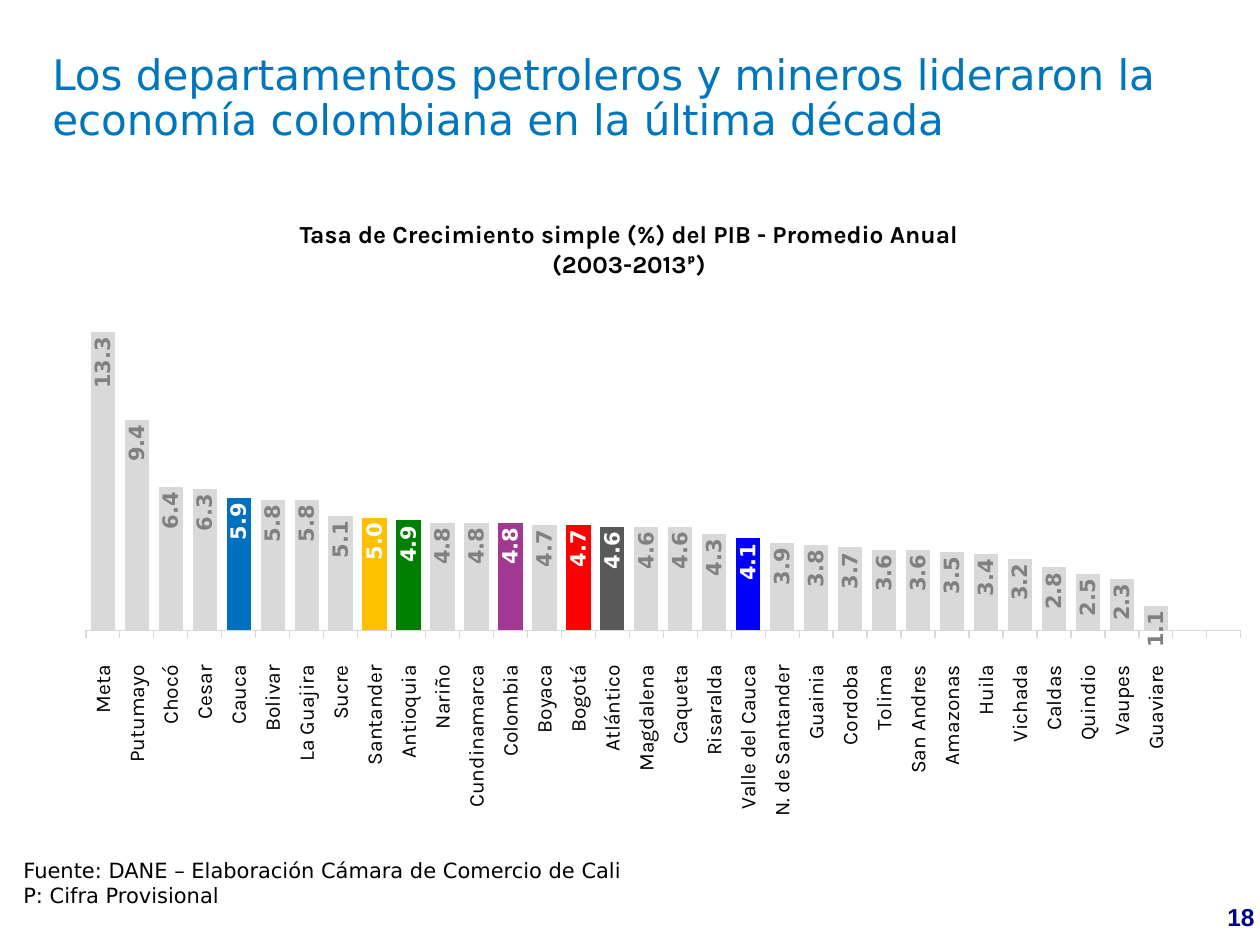
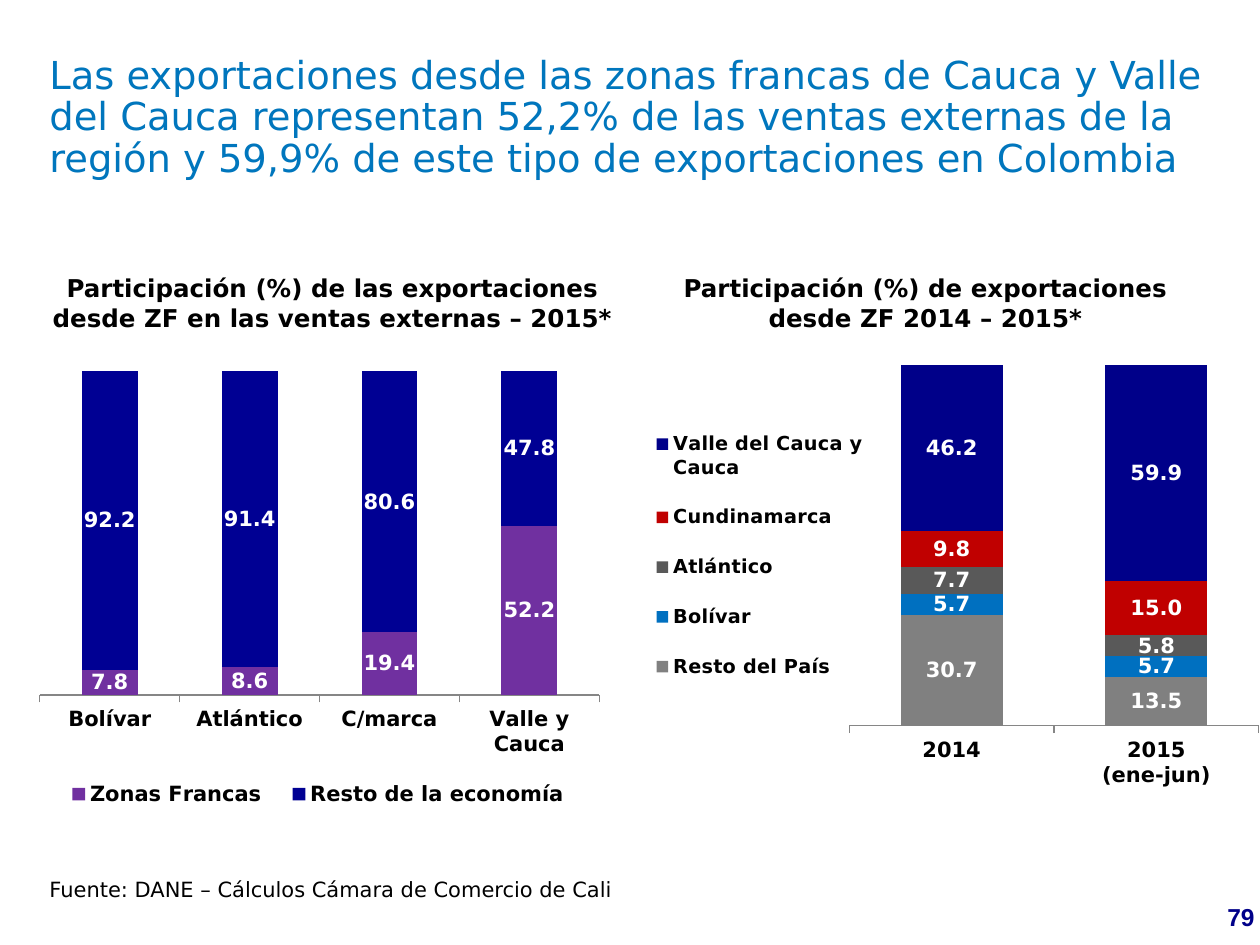
from copy import deepcopy
from dataclasses import dataclass

from lxml.etree import SubElement
from pptx import Presentation
from pptx.chart.data import CategoryChartData
from pptx.dml.color import RGBColor
from pptx.enum.chart import (XL_CHART_TYPE, XL_LABEL_POSITION, XL_LEGEND_POSITION,
                             XL_TICK_LABEL_POSITION, XL_TICK_MARK)
from pptx.enum.text import MSO_ANCHOR, PP_ALIGN
from pptx.oxml.ns import qn
from pptx.util import Emu, Pt

PX = 914400 / 126


@dataclass(frozen=True)
class Theme:
    body: str = "DejaVu Sans"
    heading: str = "Karla"
    symbol: str = "Calibri"
    number: str = "Arial"
    black: str = "000000"
    white: str = "FFFFFF"
    title: str = "0076BD"
    navy: str = "000089"
    deep_navy: str = "000093"
    bar: str = "D9D9D9"
    gray: str = "808080"
    dark_gray: str = "595959"
    axis: str = "868686"
    blue: str = "0070C0"
    pure_blue: str = "0000FF"
    gold: str = "FFC000"
    green: str = "008000"
    magenta: str = "A13992"
    red: str = "FF0000"
    dark_red: str = "C00000"
    purple: str = "7030A0"
    title_size: int = 24
    long_title_size: int = 22
    heading_size: int = 14
    text_size: int = 12
    small_size: int = 11


def px(n):
    return Emu(round(n * PX))


class Deck:
    def __init__(self, theme):
        self.theme = theme
        self.prs = Presentation()
        self.prs.slide_width, self.prs.slide_height = px(1260), px(945)
        self.slide = None

    def new_slide(self, number):
        self.slide = self.prs.slides.add_slide(self.prs.slide_layouts[6])
        t = self.theme
        self.text((1202, 896, 78, 43), [str(number)], t.heading_size, t.navy,
                  bold=True, name=t.number, align=PP_ALIGN.CENTER)

    def style(self, font, size, color, bold=False, name=None):
        font.size, font.bold, font.name = Pt(size), bold, name or self.theme.body
        font.color.rgb = RGBColor.from_string(color)

    def text(self, box, lines, size, color, bold=False, name=None,
             align=PP_ALIGN.LEFT, anchor=MSO_ANCHOR.TOP, spacing=None):
        tf = self.slide.shapes.add_textbox(*map(px, box)).text_frame
        tf.word_wrap, tf.vertical_anchor = True, anchor
        for i, line in enumerate(lines):
            p = tf.paragraphs[0] if i == 0 else tf.add_paragraph()
            p.alignment = align
            if spacing:
                p.line_spacing = spacing
            for part in [line] if isinstance(line, str) else line:
                r = p.add_run()
                if isinstance(part, tuple):
                    r.text, r.font.name = part
                else:
                    r.text = part
            self.style(p.font, size, color, bold, name)

    def title(self, box, words, size, anchor=MSO_ANCHOR.TOP):
        self.text(box, [words], size, self.theme.title, anchor=anchor, spacing=0.9)

    def heading(self, box, lines, name=None):
        self.text(box, lines, self.theme.heading_size, self.theme.black,
                  bold=True, name=name, align=PP_ALIGN.CENTER)

    def source(self, box, lines):
        self.text(box, lines, self.theme.text_size, self.theme.black)

    def layout(self, parent, box, inner=False):
        old = parent.find(qn("c:layout"))
        if old is not None:
            parent.remove(old)
        layout = SubElement(parent, qn("c:layout"))
        manual = SubElement(layout, qn("c:manualLayout"))
        if inner:
            SubElement(manual, qn("c:layoutTarget")).set("val", "inner")
        for key in ("xMode", "yMode"):
            SubElement(manual, qn(f"c:{key}")).set("val", "edge")
        for key, value in zip("xywh", box):
            SubElement(manual, qn(f"c:{key}")).set("val", str(value))
        if inner:
            parent.insert(0, layout)
        else:
            parent.find(qn("c:legendPos")).addnext(layout)

    def chart(self, kind, box, cats, series, plot_box, gap, line, label_color,
              limits=(None, None), axis_font=None, axis_bold=True):
        t = self.theme
        data = CategoryChartData(number_format="0.0")
        data.categories = cats
        for name, values, _ in series:
            data.add_series(name, values)
        chart = self.slide.shapes.add_chart(kind, *map(px, box), data).chart
        chart.has_title = chart.has_legend = False
        self.style(chart.font, t.text_size, t.black)
        self.layout(chart.plots[0]._element.getparent(), plot_box, inner=True)
        plot = chart.plots[0]
        plot.gap_width, plot.vary_by_categories = gap, False
        if kind != XL_CHART_TYPE.COLUMN_CLUSTERED:
            plot.overlap = 100
        value_axis = chart.value_axis
        value_axis.visible = value_axis.has_major_gridlines = False
        low, high = limits
        if high is not None:
            value_axis.minimum_scale, value_axis.maximum_scale = low, high
        axis = chart.category_axis
        axis.major_tick_mark = XL_TICK_MARK.OUTSIDE
        axis.format.line.color.rgb = RGBColor.from_string(line)
        axis.format.line.width = Pt(0.75)
        self.style(axis.tick_labels.font, t.text_size, t.black, axis_bold, axis_font)
        for s, (_, _, color) in zip(plot.series, series):
            s.format.fill.solid()
            s.format.fill.fore_color.rgb = RGBColor.from_string(color)
            labels = s.data_labels
            labels.show_value = True
            labels.number_format, labels.number_format_is_linked = "0.0", False
            self.style(labels.font, t.text_size, label_color, bold=True)
        return chart

    def legend(self, chart, position, size, box):
        chart.has_legend = True
        legend = chart.legend
        legend.position, legend.include_in_layout = position, False
        self.style(legend.font, size, self.theme.black, bold=True)
        self.layout(legend._element, box)

    def turn(self, element):
        body = element.find(qn("c:txPr")).find(qn("a:bodyPr"))
        body.set("rot", "-5400000")
        body.set("vert", "horz")

    def highlight(self, series, colors):
        labels = series.data_labels._element
        for i, color in colors.items():
            point = series.points[i]
            point.format.fill.solid()
            point.format.fill.fore_color.rgb = RGBColor.from_string(color)
            label = point.data_label
            self.style(label.font, self.theme.text_size, self.theme.white, bold=True)
            label.position = XL_LABEL_POSITION.INSIDE_END
        for item in labels.findall(qn("c:dLbl")):
            item.find(qn("c:idx")).addnext(deepcopy(labels.find(qn("c:numFmt"))))
            self.turn(item)


def growth_slide(deck):
    t = deck.theme
    deck.new_slide(18)
    deck.heading((226, 213, 806, 72), [
        "Tasa de Crecimiento simple (%) del PIB - Promedio Anual",
        ["(2003-2013", ("ᵖ", t.symbol), ")"]], t.heading)
    growth = {
        "Meta": 13.3, "Putumayo": 9.4, "Chocó": 6.4, "Cesar": 6.3, "Cauca": 5.9,
        "Bolivar": 5.8, "La Guajira": 5.8, "Sucre": 5.1, "Santander": 5.0,
        "Antioquia": 4.9, "Nariño": 4.8, "Cundinamarca": 4.8, "Colombia": 4.8,
        "Boyaca": 4.7, "Bogotá": 4.7, "Atlántico": 4.6, "Magdalena": 4.6,
        "Caqueta": 4.6, "Risaralda": 4.3, "Valle del Cauca": 4.1,
        "N. de Santander": 3.9, "Guainia": 3.8, "Cordoba": 3.7, "Tolima": 3.6,
        "San Andres": 3.6, "Amazonas": 3.5, "Huila": 3.4, "Vichada": 3.2,
        "Caldas": 2.8, "Quindio": 2.5, "Vaupes": 2.3, "Guaviare": 1.1}
    accents = {"Cauca": t.blue, "Santander": t.gold, "Antioquia": t.green,
               "Colombia": t.magenta, "Bogotá": t.red, "Atlántico": t.dark_gray,
               "Valle del Cauca": t.pure_blue}
    names = list(growth)
    chart = deck.chart(
        XL_CHART_TYPE.COLUMN_CLUSTERED, (68, 275, 1192, 577), names + ["", ""],
        [("Series 1", list(growth.values()) + [None, None], t.bar)],
        (0.015, 0.033, 0.969, 0.622), 40, t.bar, t.gray, (-1, 15), t.heading, False)
    chart.category_axis.tick_label_position = XL_TICK_LABEL_POSITION.LOW
    deck.turn(chart.category_axis._element)
    series = chart.plots[0].series[0]
    series.data_labels.position = XL_LABEL_POSITION.INSIDE_END
    deck.turn(series.data_labels._element)
    deck.highlight(series, {names.index(n): c for n, c in accents.items()})
    deck.title((40, 48, 1133, 100),
               "Los departamentos petroleros y mineros lideraron la "
               "economía colombiana en la última década", t.title_size)
    deck.source((11, 851, 1211, 63), [
        "Fuente: DANE – Elaboración Cámara de Comercio de Cali",
        "P: Cifra Provisional"])


def free_zone_slide(deck):
    t = deck.theme
    deck.new_slide(79)
    shares = deck.chart(
        XL_CHART_TYPE.COLUMN_STACKED_100, (650, 365, 610, 459),
        ["2014", "2015\n(ene-jun)"],
        [("Resto del País", (30.7, 13.5), t.gray),
         ("Bolívar", (5.7, 5.7), t.blue),
         ("Atlántico", (7.7, 5.8), t.dark_gray),
         ("Cundinamarca", (9.8, 15.0), t.dark_red),
         ("Valle del Cauca y Cauca", (46.2, 59.9), t.navy)],
        (0.327, 0, 0.671, 0.786), 100, t.axis, t.white)
    deck.legend(shares, XL_LEGEND_POSITION.LEFT, t.small_size, (0, 0.09, 0.36, 0.65))
    sales = deck.chart(
        XL_CHART_TYPE.COLUMN_STACKED, (37, 365, 563, 459),
        ["Bolívar", "Atlántico", "C/marca", "Valle y Cauca"],
        [("Zonas Francas", (7.8, 8.6, 19.4, 52.2), t.purple),
         ("Resto de la economía", (92.2, 91.4, 80.6, 47.8), t.deep_navy)],
        (0.005, 0, 0.995, 0.719), 150, t.axis, t.white, (0, 102))
    sales.value_axis.major_unit = 20
    deck.legend(sales, XL_LEGEND_POSITION.BOTTOM, t.text_size, (0.02, 0.89, 0.96, 0.09))
    deck.heading((37, 267, 591, 72), [
        "Participación (%) de las exportaciones desde ZF en las ventas externas – 2015*"])
    deck.heading((630, 267, 591, 72), [
        "Participación (%) de exportaciones desde ZF 2014 – 2015*"])
    deck.title((37, 66, 1181, 105),
               "Las exportaciones desde las zonas francas de Cauca y Valle del Cauca "
               "representan 52,2% de las ventas externas de la región y 59,9% de este "
               "tipo de exportaciones en Colombia", t.long_title_size, MSO_ANCHOR.MIDDLE)
    deck.source((37, 870, 788, 38), ["Fuente: DANE – Cálculos Cámara de Comercio de Cali"])


def main():
    deck = Deck(Theme())
    growth_slide(deck)
    free_zone_slide(deck)
    deck.prs.save("out.pptx")


if __name__ == "__main__":
    main()
